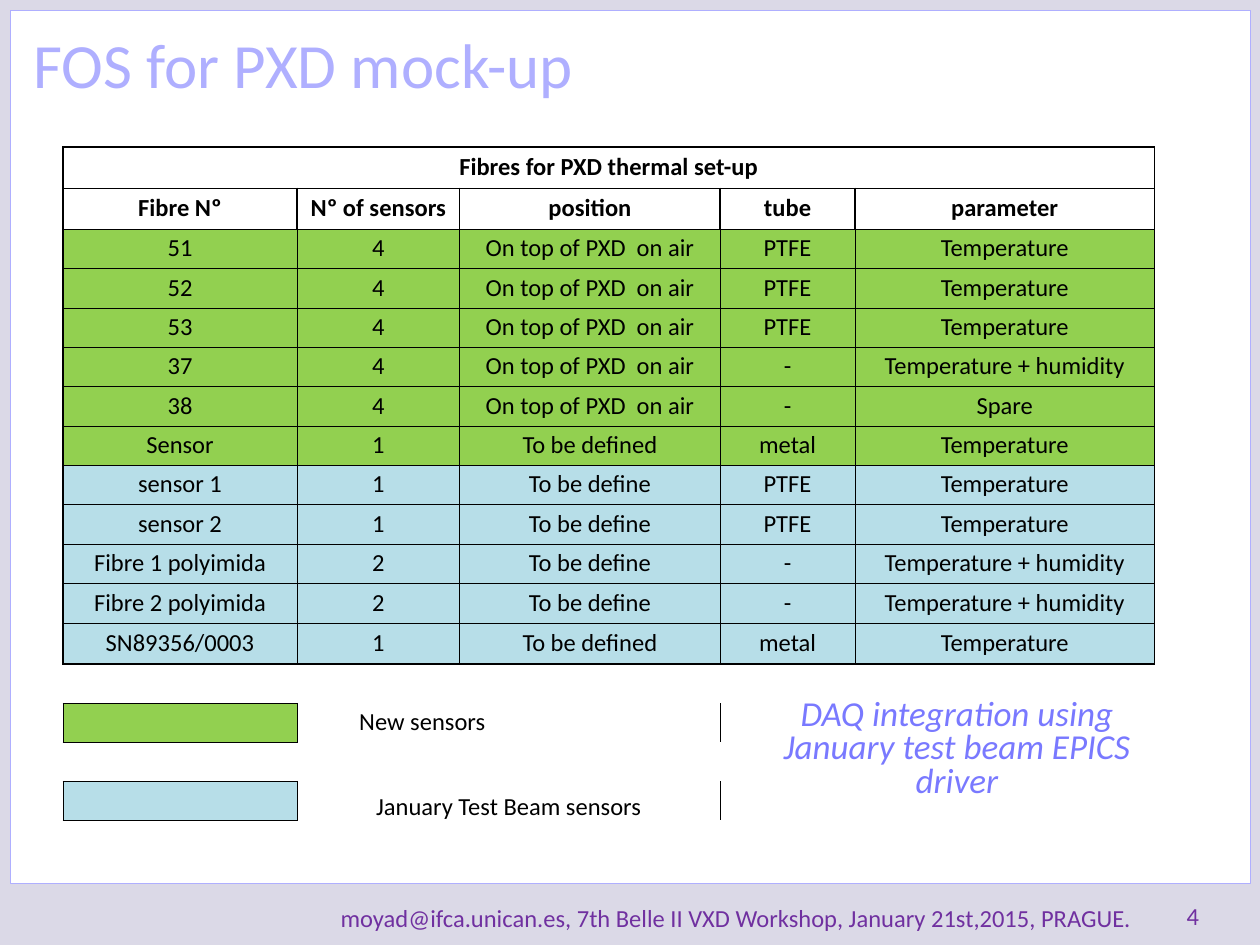
from lxml import etree
from pptx import Presentation
from pptx.dml.color import RGBColor
from pptx.enum.shapes import MSO_SHAPE
from pptx.enum.text import MSO_ANCHOR, PP_ALIGN
from pptx.oxml.ns import qn
from pptx.util import Pt

RECT = MSO_SHAPE.RECTANGLE
TOP, MIDDLE, BOTTOM = MSO_ANCHOR.TOP, MSO_ANCHOR.MIDDLE, MSO_ANCHOR.BOTTOM
LEFT, CENTER, RIGHT = PP_ALIGN.LEFT, PP_ALIGN.CENTER, PP_ALIGN.RIGHT

NO_STYLE = "{2D5ABB26-0587-4C30-8999-92F81FD0307C}"
GREEN, BLUE, BLACK = "92D050", "B7DEE8", "000000"
PURPLE = "7030A0"
THIN, THICK = 0.5, 1

TITLE = "Fibres for PXD thermal set-up"
HEADS = ["Fibre Nº", "Nº of sensors", "position", "tube", "parameter"]
AIR = "On top of PXD  on air"
BOTH = "Temperature + humidity"
NEW = [
    ["51", "4", AIR, "PTFE", "Temperature"],
    ["52", "4", AIR, "PTFE", "Temperature"],
    ["53", "4", AIR, "PTFE", "Temperature"],
    ["37", "4", AIR, "-", BOTH],
    ["38", "4", AIR, "-", "Spare"],
    ["Sensor", "1", "To be defined", "metal", "Temperature"],
]
BEAM = [
    ["sensor 1", "1", "To be define", "PTFE", "Temperature"],
    ["sensor 2", "1", "To be define", "PTFE", "Temperature"],
    ["Fibre 1 polyimida", "2", "To be define", "-", BOTH],
    ["Fibre 2 polyimida", "2", "To be define", "-", BOTH],
    ["SN89356/0003", "1", "To be defined", "metal", "Temperature"],
]
WIDTHS = [133.8, 92.9, 148.9, 77, 171.2]
HEIGHTS = [23.6] * 2 + [22.5] * 10 + [23.6, 22.3, 22.3, 21.2, 22.3]


def color(text):
    return RGBColor.from_string(text)


def apply(item, form):
    for name, value in form.items():
        setattr(item, name, value)


def write(frame, text, size, tint, align=LEFT, space=None, **form):
    para = frame.paragraphs[0]
    apply(para, {"alignment": align, "line_spacing": space})
    run = para.add_run()
    run.text = text
    apply(run.font, {"name": "Calibri", "size": Pt(size), **form})
    run.font.color.rgb = color(tint)


def add_text(slide, box, text, size, tint, anchor=TOP, **form):
    frame = slide.shapes.add_textbox(*map(Pt, box)).text_frame
    apply(frame, {"word_wrap": True, "vertical_anchor": anchor})
    write(frame, text, size, tint, **form)


def add_panel(slide, box):
    panel = slide.shapes.add_shape(RECT, *map(Pt, box))
    panel.shadow.inherit = False
    panel.fill.solid()
    panel.fill.fore_color.rgb = color("FFFFFF")
    panel.line.color.rgb = color("AFAFFF")
    panel.line.width = Pt(0.25)


def set_edges(cell, sides):
    props = cell._tc.get_or_add_tcPr()
    for side in "LRTB":
        if side in sides:
            line = etree.SubElement(props, qn("a:ln" + side), w=str(Pt(sides[side])))
            fill = etree.SubElement(line, qn("a:solidFill"))
            etree.SubElement(fill, qn("a:srgbClr"), val=BLACK)


def paint(cell, tint):
    cell.fill.solid()
    cell.fill.fore_color.rgb = color(tint)


def fill_cell(cell, text, **form):
    write(cell.text_frame, text, 14, BLACK, space=0.8, **form)


def add_table(slide, left, top):
    frame = slide.shapes.add_table(
        len(HEIGHTS), len(WIDTHS), Pt(left), Pt(top), Pt(sum(WIDTHS)), Pt(sum(HEIGHTS))
    )
    table = frame.table
    apply(table, {"first_row": False, "horz_banding": False})
    table._tbl.tblPr.find(qn("a:tableStyleId")).text = NO_STYLE
    for col, width in zip(table.columns, WIDTHS):
        col.width = Pt(width)
    for row, height in zip(table.rows, HEIGHTS):
        row.height = Pt(height)
    pad = {f"margin_{side}": Pt(0.7) for side in ("left", "right", "top")}
    for cell in table.iter_cells():
        apply(cell, {**pad, "margin_bottom": 0, "vertical_anchor": MIDDLE})
        cell.text_frame.paragraphs[0].line_spacing = 0.8
    return table


def fill_heads(table):
    table.cell(0, 0).merge(table.cell(0, len(HEADS) - 1))
    fill_cell(table.cell(0, 0), TITLE, align=CENTER, bold=True)
    for j, head in enumerate(HEADS):
        fill_cell(table.cell(1, j), head, align=CENTER, bold=True)
        for i in range(2):
            set_edges(table.cell(i, j), dict.fromkeys("LRTB", THICK))


def fill_rows(table):
    rows = [(row, GREEN) for row in NEW] + [(row, BLUE) for row in BEAM]
    for i, (row, tint) in enumerate(rows):
        for j, text in enumerate(row):
            cell = table.cell(i + 2, j)
            fill_cell(cell, text, align=CENTER)
            outer = {
                "L": j == 0,
                "R": j == len(row) - 1,
                "T": i == 0,
                "B": i == len(rows) - 1,
            }
            set_edges(cell, {s: THICK if out else THIN for s, out in outer.items()})
            paint(cell, tint)


def add_key(table, row, tint, text, align):
    swatch, label = table.cell(row, 0), table.cell(row, 1)
    set_edges(swatch, dict.fromkeys("LRTB", THIN))
    paint(swatch, tint)
    label.merge(table.cell(row, 2))
    fill_cell(label, text, align=align)
    set_edges(label, {"L": THIN})
    return label


def main():
    deck = Presentation()
    apply(deck, {"slide_width": Pt(720), "slide_height": Pt(540)})
    slide = deck.slides.add_slide(deck.slide_layouts[6])
    slide.background.fill.solid()
    slide.background.fill.fore_color.rgb = color("DBD9E7")

    add_panel(slide, (6, 6, 708.5, 499))
    add_text(slide, (12, 11, 558, 90.7), "FOS for PXD mock-up", 36, "AFAFFF")
    add_text(slide, (671, 499, 42, 36), "4", 14, PURPLE, BOTTOM)
    foot = "moyad@ifca.unican.es, 7th Belle II VXD Workshop, January 21st,2015, PRAGUE."
    add_text(slide, (131.8, 500.4, 522, 36), foot, 14, PURPLE, BOTTOM, align=RIGHT)

    table = add_table(slide, 36, 84)
    fill_heads(table)
    fill_rows(table)
    label = add_key(table, 14, GREEN, "New sensors", LEFT)
    label.margin_left = Pt(35.5)
    label = add_key(table, 16, BLUE, "January Test Beam sensors", CENTER)
    label.vertical_anchor = BOTTOM

    note = "DAQ integration using January test beam EPICS driver"
    add_text(
        slide, (432, 396, 229.7, 90), note, 20, "7979FF",
        align=CENTER, space=0.8, italic=True,
    )
    deck.save("out.pptx")


if __name__ == "__main__":
    main()
